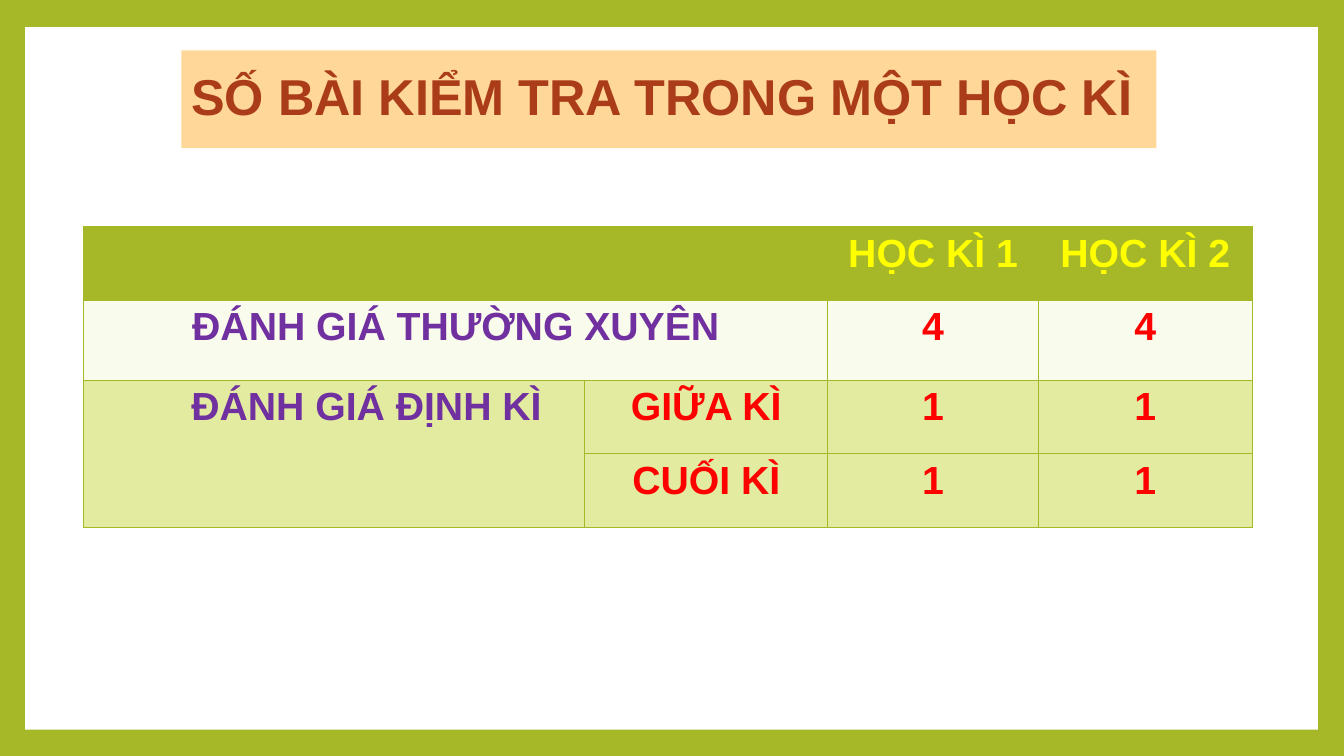
from lxml import etree
from pptx import Presentation
from pptx.dml.color import RGBColor
from pptx.enum.shapes import MSO_SHAPE
from pptx.enum.text import MSO_ANCHOR, PP_ALIGN
from pptx.oxml.ns import qn
from pptx.util import Inches, Pt

RECTANGLE = MSO_SHAPE.RECTANGLE
MIDDLE = MSO_ANCHOR.MIDDLE
LEFT, CENTER = PP_ALIGN.LEFT, PP_ALIGN.CENTER

COLORS = {
    "green": "A6B727", "white": "FFFFFF", "peach": "FFD899", "rust": "AB3C19",
    "yellow": "FFFF00", "purple": "7030A0", "red": "FF0000",
    "pale": "F9FBEC", "light": "E2EBA0",
}
FONT = "Arial"
COLUMN_WIDTHS = [4.97, 2.41, 2.09, 2.12]
ROW_HEIGHTS = [0.73, 0.79, 0.73, 0.73]
ROW_FILLS = ["green", "pale", "light", "light"]
TESTS = [
    ["", "", "HỌC KÌ 1", "HỌC KÌ 2"],
    ["ĐÁNH GIÁ THƯỜNG XUYÊN", "", "4", "4"],
    ["ĐÁNH GIÁ ĐỊNH KÌ", "GIỮA KÌ", "1", "1"],
    ["", "CUỐI KÌ", "1", "1"],
]


def color(name):
    return RGBColor.from_string(COLORS[name])


def fill_solid(fill, name):
    fill.solid()
    fill.fore_color.rgb = color(name)


def write(para, text, size, name, align):
    para.text = text
    para.alignment = align
    para.font.name = FONT
    para.font.size = Pt(size)
    para.font.bold = True
    para.font.color.rgb = color(name)


def add_box(page, box, fill_name):
    shape = page.shapes.add_shape(RECTANGLE, *map(Inches, box))
    shape.shadow.inherit = False
    fill_solid(shape.fill, fill_name)
    shape.line.fill.background()
    return shape


def add_frame(page, box):
    fill_solid(page.background.fill, "green")
    add_box(page, box, "white")


def add_title(page, box):
    frame = add_box(page, box, "peach").text_frame
    frame.word_wrap = True
    frame.vertical_anchor = MIDDLE
    para = frame.paragraphs[0]
    write(para, "SỐ BÀI KIỂM TRA TRONG MỘT HỌC KÌ", 36, "rust", LEFT)
    para.line_spacing = 0.9


def add_borders(cell):
    properties = cell._tc.get_or_add_tcPr()
    for side in ("a:lnL", "a:lnR", "a:lnT", "a:lnB"):
        line = etree.SubElement(properties, qn(side), w=str(Pt(0.75)))
        solid = etree.SubElement(line, qn("a:solidFill"))
        etree.SubElement(solid, qn("a:srgbClr"), val=COLORS["green"])


def add_test_table(page, box):
    table = page.shapes.add_table(
        len(ROW_HEIGHTS), len(COLUMN_WIDTHS), *map(Inches, box)).table
    for column, width in zip(table.columns, COLUMN_WIDTHS):
        column.width = Inches(width)
    for row, height in zip(table.rows, ROW_HEIGHTS):
        row.height = Inches(height)

    # Cell text, borders and fills
    for r, texts in enumerate(TESTS):
        for c, text in enumerate(texts):
            cell = table.cell(r, c)
            add_borders(cell)
            fill_solid(cell.fill, ROW_FILLS[r])
            name = "yellow" if r == 0 else "purple" if c == 0 else "red"
            write(cell.text_frame.paragraphs[0], text, 28, name, CENTER)

    # Merged labels; the last one sits right of centre
    table.cell(0, 0).merge(table.cell(0, 1))
    table.cell(1, 0).merge(table.cell(1, 1))
    table.cell(2, 0).merge(table.cell(3, 0))
    table.cell(2, 0).margin_left = Inches(0.74)


def main():
    deck = Presentation()
    deck.slide_width, deck.slide_height = Inches(13.33), Inches(7.5)
    page = deck.slides.add_slide(deck.slide_layouts[6])
    add_frame(page, (0.25, 0.27, 12.82, 6.97))
    add_title(page, (1.8, 0.5, 9.67, 0.97))
    add_test_table(page, (0.83, 2.25, sum(COLUMN_WIDTHS), sum(ROW_HEIGHTS)))
    deck.save("out.pptx")


if __name__ == "__main__":
    main()
